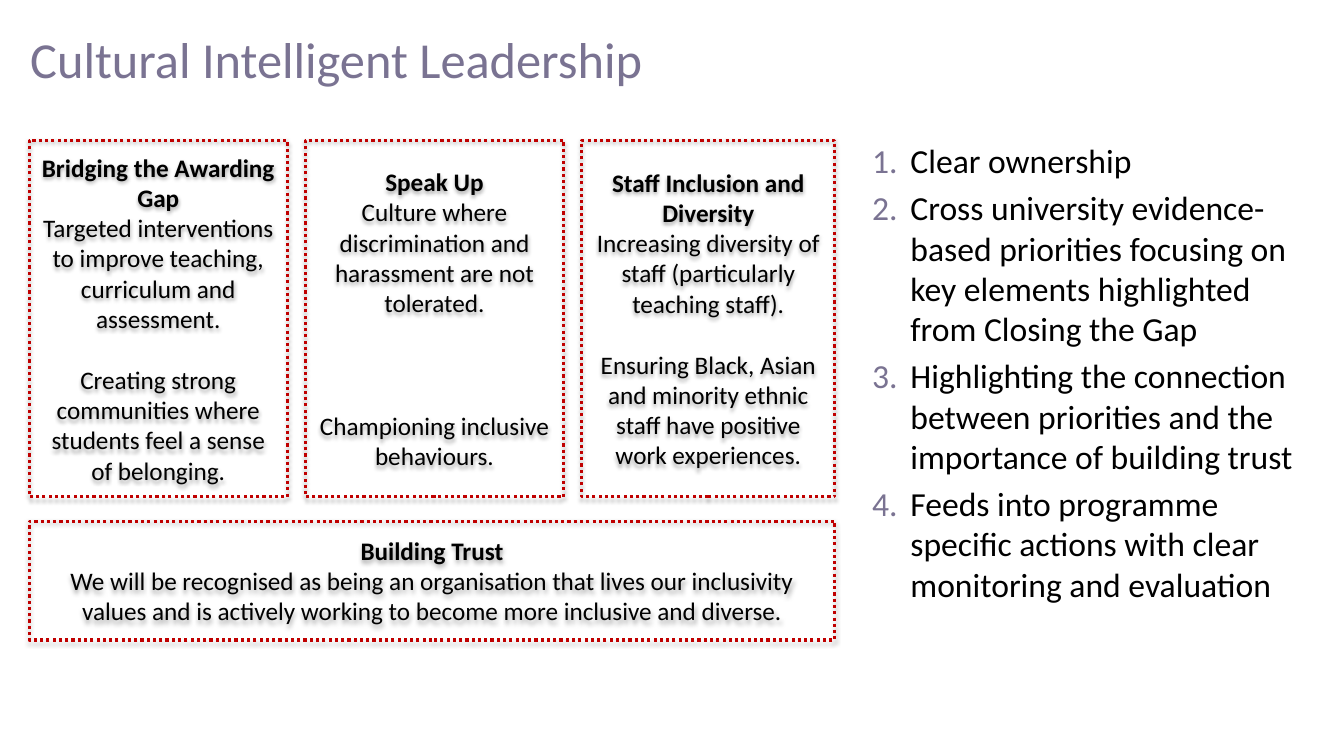
from lxml import etree
from pptx import Presentation
from pptx.dml.color import RGBColor
from pptx.enum import dml, shapes, text
from pptx.oxml import parse_xml
from pptx.oxml.ns import nsdecls, qn
from pptx.util import Inches, Pt

FONT = "Calibri"
BLACK, PURPLE, RED = "000000", "7A7392", "C00000"

TITLE = "Cultural Intelligent Leadership"
# Each priority: heading, aim, blank lines before the second aim, second aim
PRIORITIES = [
    ("Bridging the Awarding Gap",
     "Targeted interventions to improve teaching, curriculum and assessment.",
     1, "Creating strong communities where students feel a sense of belonging."),
    ("Speak Up",
     "Culture where discrimination and harassment are not tolerated.",
     3, "Championing inclusive behaviours."),
    ("Staff Inclusion and Diversity",
     "Increasing diversity of staff (particularly teaching staff).",
     1, "Ensuring Black, Asian and minority ethnic staff have positive work experiences."),
]
TRUST = ("Building Trust",
         "We will be recognised as being an organisation that lives our inclusivity "
         "values and is actively working to become more inclusive and diverse.")
ACTIONS = [
    "Clear ownership",
    "Cross university evidence-based priorities focusing on key elements highlighted "
    "from Closing the Gap",
    "Highlighting the connection between priorities and the importance of building trust",
    "Feeds into programme specific actions with clear monitoring and evaluation",
]

LEFT, RIGHT, CARD_TOP = 0.29, 8.28, 1.39
CARD_WIDTH, CARD_HEIGHT, CARD_PITCH = 2.56, 3.54, 2.74
LINE_HEIGHT = 22  # points, one line of card text


def color(hex_code):
    return RGBColor.from_string(hex_code)


def write(frame, index, words, size=18, fill=BLACK, bold=False, before=0,
          align=text.PP_ALIGN.LEFT, numbered=False):
    """Write one paragraph; index 0 uses the frame's existing paragraph."""
    para = frame.add_paragraph() if index else frame.paragraphs[0]
    para.alignment = align
    if index and before:
        para.space_before = Pt(before)
    if numbered:
        props = para._p.get_or_add_pPr()
        props.set("marL", str(Inches(0.39)))
        props.set("indent", str(Inches(-0.38)))
        bullet_color = etree.SubElement(props, qn("a:buClr"))
        etree.SubElement(bullet_color, qn("a:srgbClr"), val=PURPLE)
        etree.SubElement(props, qn("a:buFont"), typeface=FONT)
        etree.SubElement(props, qn("a:buAutoNum"), type="arabicPeriod")
    span = para.add_run()
    span.text = words
    span.font.name, span.font.size, span.font.bold = FONT, Pt(size), bold
    span.font.color.rgb = color(fill)


def add_text_area(page, left, top, width, height):
    """Add a wrapping text box without margins and return its frame."""
    box = page.shapes.add_textbox(*map(Inches, (left, top, width, height)))
    frame = box.text_frame
    frame.word_wrap = True
    frame.margin_left = frame.margin_right = frame.margin_top = frame.margin_bottom = 0
    return frame


def add_card(page, left, top, width, height, heading, aim, gap_lines=0, second_aim=None):
    """Add a dotted box with a bold heading and one or two aims."""
    box = page.shapes.add_shape(shapes.MSO_SHAPE.RECTANGLE,
                                *map(Inches, (left, top, width, height)))
    box.fill.background()
    box.line.color.rgb = color(RED)
    box.line.width = Pt(2.25)
    box.line.dash_style = dml.MSO_LINE.ROUND_DOT
    box.shadow.inherit = False
    effects = box._element.spPr.find(qn("a:effectLst"))
    effects.append(parse_xml(
        f'<a:outerShdw {nsdecls("a")} blurRad="{Pt(3.1)}" dist="{Pt(1.8)}" dir="5400000" '
        f'rotWithShape="0"><a:srgbClr val="{BLACK}"><a:alpha val="35000"/></a:srgbClr>'
        '</a:outerShdw>'))
    frame = box.text_frame
    frame.word_wrap = True
    frame.vertical_anchor = text.MSO_ANCHOR.MIDDLE
    center = text.PP_ALIGN.CENTER
    write(frame, 0, heading, bold=True, align=center)
    write(frame, 1, aim, align=center)
    if second_aim:
        write(frame, 2, second_aim, align=center, before=gap_lines * LINE_HEIGHT)


def main():
    deck = Presentation()
    deck.slide_width, deck.slide_height = Inches(13.33), Inches(7.5)
    page = deck.slides.add_slide(deck.slide_layouts[6])

    write(add_text_area(page, 0.3, 0.28, 11.57, 0.78), 0, TITLE, size=36, fill=PURPLE)

    for column, priority in enumerate(PRIORITIES):
        left = LEFT + column * CARD_PITCH
        width = min(CARD_WIDTH, RIGHT - left)
        add_card(page, left, CARD_TOP, width, CARD_HEIGHT, *priority)
    add_card(page, LEFT, 5.17, RIGHT - LEFT, 1.18, *TRUST)

    actions = add_text_area(page, 8.64, CARD_TOP, 4.2, 5.32)
    for index, action in enumerate(ACTIONS):
        write(actions, index, action, size=24, before=4.8, numbered=True)

    deck.save("out.pptx")


if __name__ == "__main__":
    main()
